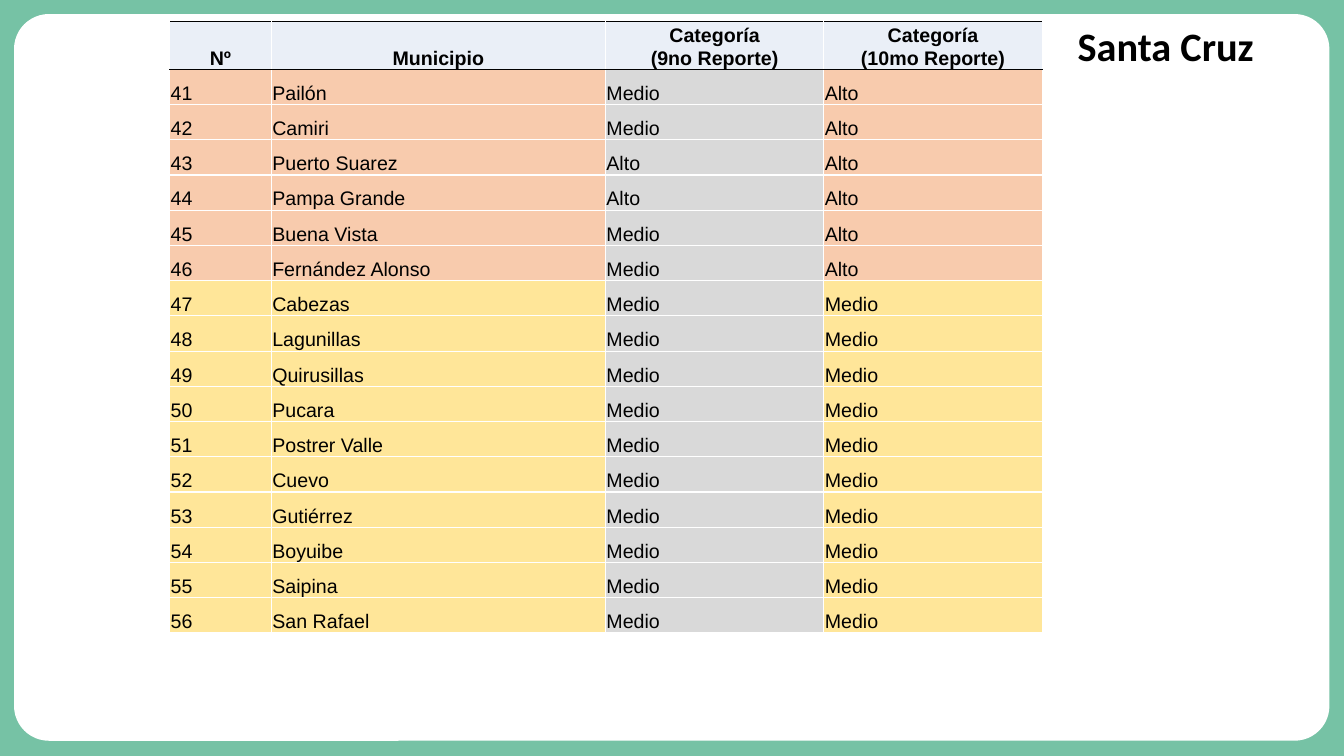
import pptx
import pptx.dml.color
import pptx.enum.shapes
import pptx.enum.text
import pptx.oxml
import pptx.oxml.ns
import pptx.util

Pt = pptx.util.Pt
ALIGN = pptx.enum.text.PP_ALIGN
ANCHOR = pptx.enum.text.MSO_ANCHOR

COLORS = {
    "frame": "76C2A5",
    "panel": "FFFFFF",
    "text": "000000",
    "rule": "000000",
    "grid": "FFFFFF",
    "header": "EAEFF7",
    "previous": "D9D9D9",
    "Alto": "F8CBAD",
    "Medio": "FFE699",
}
HEADINGS = ["Nº", "Municipio", "Categoría\n(9no Reporte)", "Categoría\n(10mo Reporte)"]
FIRST_NUMBER = 41
MUNICIPALITIES = [
    ("Pailón", "Medio", "Alto"),
    ("Camiri", "Medio", "Alto"),
    ("Puerto Suarez", "Alto", "Alto"),
    ("Pampa Grande", "Alto", "Alto"),
    ("Buena Vista", "Medio", "Alto"),
    ("Fernández Alonso", "Medio", "Alto"),
    ("Cabezas", "Medio", "Medio"),
    ("Lagunillas", "Medio", "Medio"),
    ("Quirusillas", "Medio", "Medio"),
    ("Pucara", "Medio", "Medio"),
    ("Postrer Valle", "Medio", "Medio"),
    ("Cuevo", "Medio", "Medio"),
    ("Gutiérrez", "Medio", "Medio"),
    ("Boyuibe", "Medio", "Medio"),
    ("Saipina", "Medio", "Medio"),
    ("San Rafael", "Medio", "Medio"),
]
COLUMN_SHARES = [1.01, 3.32, 2.17, 2.17]
HEADER_HEIGHT = 32


def rgb(name):
    return pptx.dml.color.RGBColor.from_string(COLORS[name])


def paint(fill, name):
    fill.solid()
    fill.fore_color.rgb = rgb(name)


def write(frame, text, *, size=14, font="Arial", bold=False, align=ALIGN.LEFT, spacing=1.0):
    for index, line in enumerate(text.split("\n")):
        paragraph = frame.paragraphs[0] if index == 0 else frame.add_paragraph()
        paragraph.alignment = align
        paragraph.line_spacing = spacing
        run = paragraph.add_run()
        run.text = line
        run.font.size = Pt(size)
        run.font.name = font
        run.font.bold = bold
        run.font.color.rgb = rgb("text")


def draw_borders(cell, top, bottom):
    sides = [("L", "grid"), ("R", "grid"), ("T", top), ("B", bottom)]
    properties = cell._tc.get_or_add_tcPr()
    for position, (side, color) in enumerate(sides):
        border = pptx.oxml.parse_xml(
            f'<a:ln{side} {pptx.oxml.ns.nsdecls("a")} w="{Pt(1)}"><a:solidFill>'
            f'<a:srgbClr val="{COLORS[color]}"/></a:solidFill></a:ln{side}>'
        )
        properties.insert(position, border)


def add_panel(slide, left, top, width, height):
    panel = slide.shapes.add_shape(
        pptx.enum.shapes.MSO_SHAPE.ROUNDED_RECTANGLE, Pt(left), Pt(top), Pt(width), Pt(height)
    )
    panel.adjustments[0] = 0.048
    panel.shadow.inherit = False
    paint(panel.fill, "panel")
    panel.line.fill.background()


def add_title(slide, left, top, width, height):
    title = slide.shapes.add_textbox(Pt(left), Pt(top), Pt(width), Pt(height))
    frame = title.text_frame
    frame.word_wrap = True
    frame.vertical_anchor = ANCHOR.MIDDLE
    write(frame, "Santa Cruz", size=28.8, font="Calibri", bold=True, align=ALIGN.CENTER, spacing=0.9)


def fill_cell(cell, text, color, top, bottom, **text_format):
    cell.margin_left = cell.margin_right = cell.margin_top = Pt(0.7)
    cell.margin_bottom = Pt(0)
    cell.vertical_anchor = ANCHOR.BOTTOM
    paint(cell.fill, color)
    draw_borders(cell, top, bottom)
    write(cell.text_frame, text, **text_format)


def add_category_table(slide, left, top, width, height):
    row_count = len(MUNICIPALITIES) + 1
    table = slide.shapes.add_table(
        row_count, len(HEADINGS), Pt(left), Pt(top), Pt(width), Pt(height)
    ).table
    table.horz_banding = False
    for column, share in zip(table.columns, COLUMN_SHARES):
        column.width = Pt(width * share / sum(COLUMN_SHARES))
    for row in table.rows:
        row.height = Pt((height - HEADER_HEIGHT) / len(MUNICIPALITIES))
    table.rows[0].height = Pt(HEADER_HEIGHT)

    for column, heading in enumerate(HEADINGS):
        fill_cell(table.cell(0, column), heading, "header", "rule", "rule",
                  bold=True, align=ALIGN.CENTER)
    for row, (name, previous, current) in enumerate(MUNICIPALITIES, start=1):
        values = [str(FIRST_NUMBER + row - 1), name, previous, current]
        fills = [current, current, "previous", current]
        above = "rule" if row == 1 else "grid"
        for column, (value, color) in enumerate(zip(values, fills)):
            fill_cell(table.cell(row, column), value, color, above, "grid")


def main():
    deck = pptx.Presentation()
    deck.slide_width, deck.slide_height = Pt(960), Pt(540)
    slide = deck.slides.add_slide(deck.slide_layouts[6])
    paint(slide.background.fill, "frame")
    add_panel(slide, 10, 10, 939.6, 519.1)
    add_title(slide, 744.5, 15.1, 176.4, 39.6)
    add_category_table(slide, 121.2, 15.1, 623.3, 435)
    deck.save("out.pptx")


if __name__ == "__main__":
    main()
